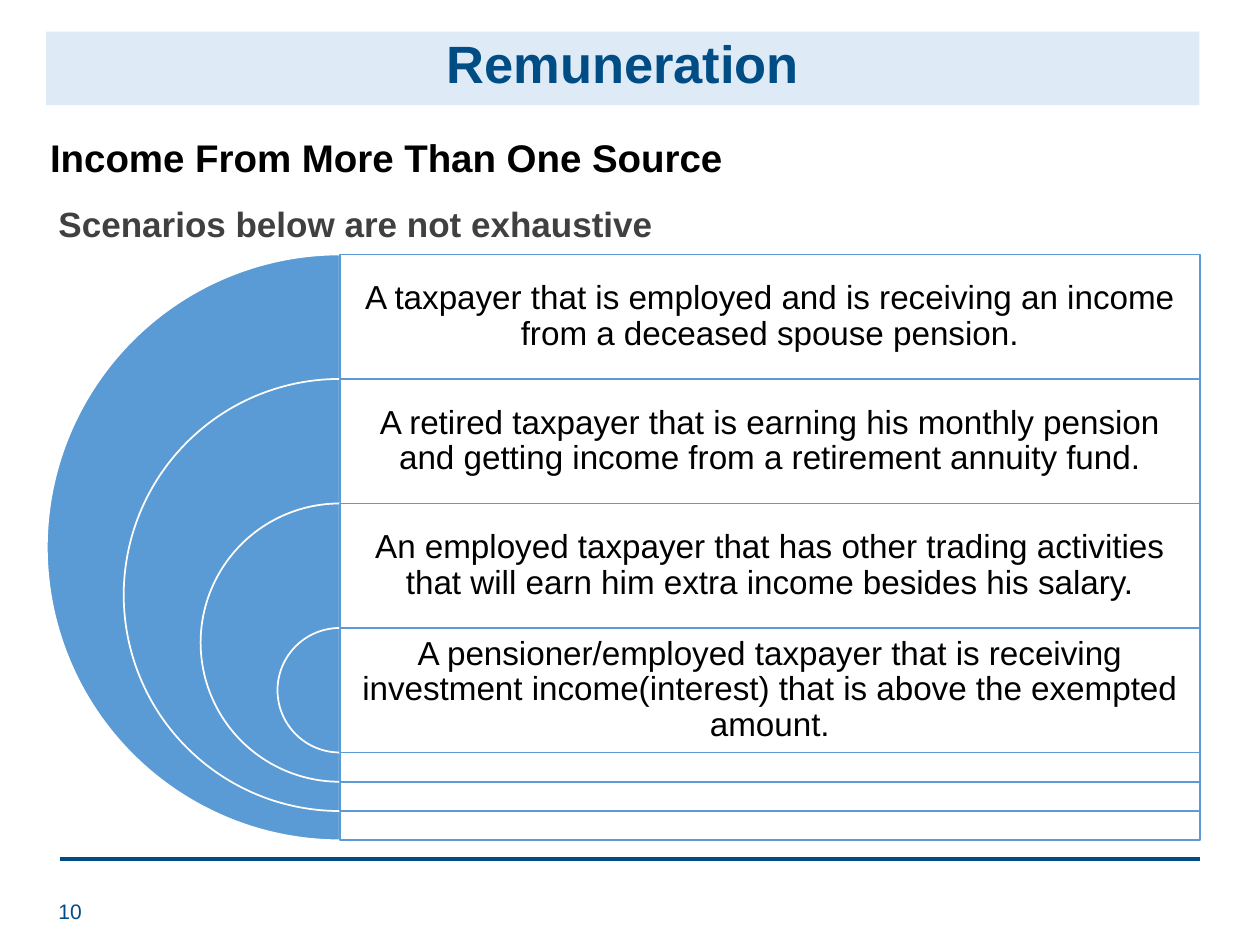
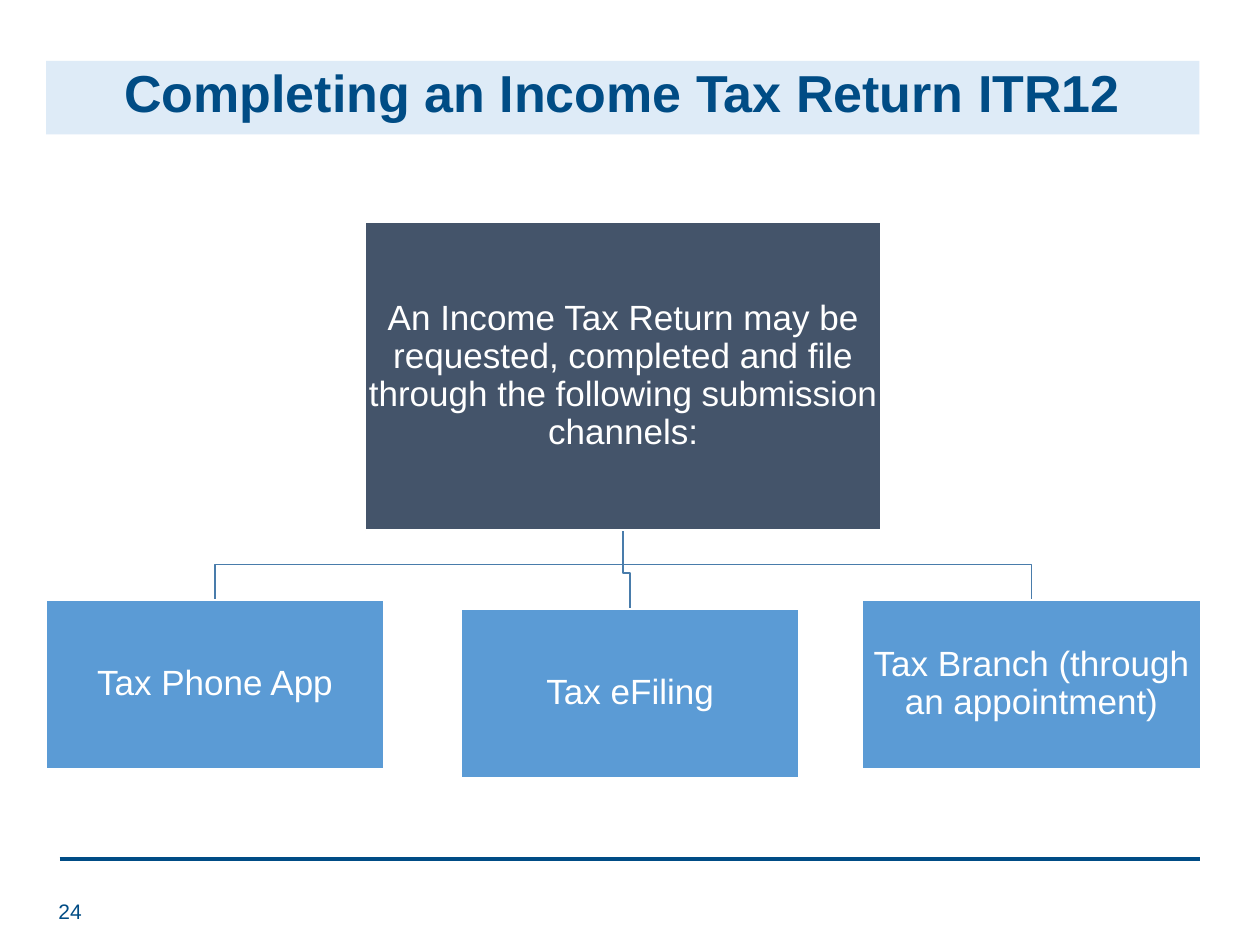
import pptx
import pptx.util
import pptx.dml.color
import pptx.enum.shapes
import pptx.enum.text
import lxml.etree

Cm = pptx.util.Cm
Pt = pptx.util.Pt
SHAPE = pptx.enum.shapes.MSO_SHAPE
ALIGN = pptx.enum.text.PP_ALIGN
ANCHOR = pptx.enum.text.MSO_ANCHOR

NAVY, PALE_BLUE, BLUE, SLATE = "004C85", "DEEBF7", "5B9BD5", "44546A"
STEEL, WHITE, BLACK, GREY = "497CAB", "FFFFFF", "000000", "404040"
MARGIN, CONTENT_WIDTH = 0.93, 23.25


def color(hex_code):
    return pptx.dml.color.RGBColor.from_string(hex_code)


def add_box(slide, left, top, width, height, text="", size=20, ink=BLACK, fill=None,
            line=None, bold=False, align=ALIGN.CENTER, anchor=ANCHOR.MIDDLE,
            insets=(0.25, 0.13, 0.25, 0.13), spacing=0.9, outline=SHAPE.RECTANGLE):
    place = [Cm(value) for value in (left, top, width, height)]
    if fill:
        box = slide.shapes.add_shape(outline, *place)
        box.shadow.inherit = False
        box.fill.solid()
        box.fill.fore_color.rgb = color(fill)
        if line:
            box.line.color.rgb = color(line)
            box.line.width = Pt(1)
        else:
            box.line.fill.background()
    else:
        box = slide.shapes.add_textbox(*place)
    if text:
        frame = box.text_frame
        frame.word_wrap = True
        frame.vertical_anchor = anchor
        frame.margin_left, frame.margin_top, frame.margin_right, frame.margin_bottom = [
            Cm(inset) for inset in insets]
        frame.text = text
        paragraph = frame.paragraphs[0]
        paragraph.alignment = align
        paragraph.line_spacing = spacing
        font = paragraph.runs[0].font
        font.name = "Arial"
        font.size = Pt(size)
        font.bold = bold
        font.color.rgb = color(ink)
    return box


deck = pptx.Presentation()
deck.slide_width, deck.slide_height = Cm(25.4), Cm(19.05)

slides = []
for title, title_size, band_top, page_number in (
        ("Remuneration", 30, 0.64, "10"),
        ("Completing an Income Tax Return ITR12", 29.7, 1.23, "24")):
    slide = deck.slides.add_slide(deck.slide_layouts[6])
    footer_rule = slide.shapes.add_connector(
        pptx.enum.shapes.MSO_CONNECTOR.STRAIGHT, Cm(1.2), Cm(17.32), Cm(24.2), Cm(17.32))
    footer_rule.line.color.rgb = color(NAVY)
    footer_rule.line.width = Pt(2)
    lxml.etree.SubElement(footer_rule._element.spPr, pptx.oxml.ns.qn("a:effectLst"))
    add_box(slide, MARGIN, band_top, CONTENT_WIDTH, 1.48, title, title_size, NAVY,
            fill=PALE_BLUE, bold=True, anchor=ANCHOR.TOP)
    add_box(slide, MARGIN, 17.86, 1.17, 1.02, page_number, 12, NAVY,
            align=ALIGN.LEFT, spacing=1)
    slides.append(slide)
income_slide, return_slide = slides

add_box(income_slide, 0.76, 2.67, 23.67, 1.48, "Income From More Than One Source", 22,
        bold=True, align=ALIGN.LEFT, anchor=ANCHOR.TOP)
add_box(income_slide, MARGIN, 4.04, 21.9, 1.22, "Scenarios below are not exhaustive", 20,
        GREY, bold=True, align=ALIGN.LEFT, anchor=ANCHOR.TOP)

scenarios = (
    "A taxpayer that is employed and is receiving an income from a deceased spouse pension.",
    "A retired taxpayer that is earning his monthly pension and getting income from a "
    "retirement annuity fund.",
    "An employed taxpayer that has other trading activities that will earn him extra income "
    "besides his salary.",
    "A pensioner/employed taxpayer that is receiving investment income(interest) that is "
    "above the exempted amount.",
)
arc_center, scenario_width, row_height = 6.85, 17.34, 2.51
for row, scenario in enumerate(scenarios):
    top = 5.13 + row * row_height
    depth = 11.81 - row * 3.1
    arc = add_box(income_slide, arc_center - depth / 2, top, depth, depth,
                  fill=BLUE, line=WHITE, outline=SHAPE.PIE)
    arc.adjustments[0], arc.adjustments[1] = 54, 162
    add_box(income_slide, arc_center, top, scenario_width, depth, scenario, 19,
            fill=WHITE, line=BLUE, insets=(0.2, 0.2, 0.2, depth - row_height + 0.2))

channels = (
    ("Tax Phone App", MARGIN, 12.1),
    ("Tax eFiling", 9.3, 12.28),
    ("Tax Branch (through an appointment)", 17.39, 12.1),
)
channel_width, channel_height = 6.81, 3.4
request_left, request_top, request_width, request_height = 7.37, 4.47, 10.39, 6.22
trunk_x, trunk_top = request_left + request_width / 2, request_top + request_height
tight = (0.03, 0.03, 0.03, 0.03)

for channel, left, top in channels:
    branch_x, bend_y = left + channel_width / 2, top - 0.72
    route = return_slide.shapes.build_freeform(Cm(trunk_x), Cm(trunk_top))
    route.add_line_segments(
        [(Cm(x), Cm(y)) for x, y in ((trunk_x, bend_y), (branch_x, bend_y), (branch_x, top))],
        close=False)
    branch = route.convert_to_shape()
    branch.shadow.inherit = False
    branch.fill.background()
    branch.line.color.rgb = color(STEEL)
    branch.line.width = Pt(1)
    add_box(return_slide, left, top, channel_width, channel_height, channel, 20, WHITE,
            fill=BLUE, line=WHITE, insets=tight)

add_box(return_slide, request_left, request_top, request_width, request_height,
        "An Income Tax Return may be requested, completed and file through the following "
        "submission channels:", 20, WHITE, fill=SLATE, line=WHITE, insets=tight)

deck.save("out.pptx")
